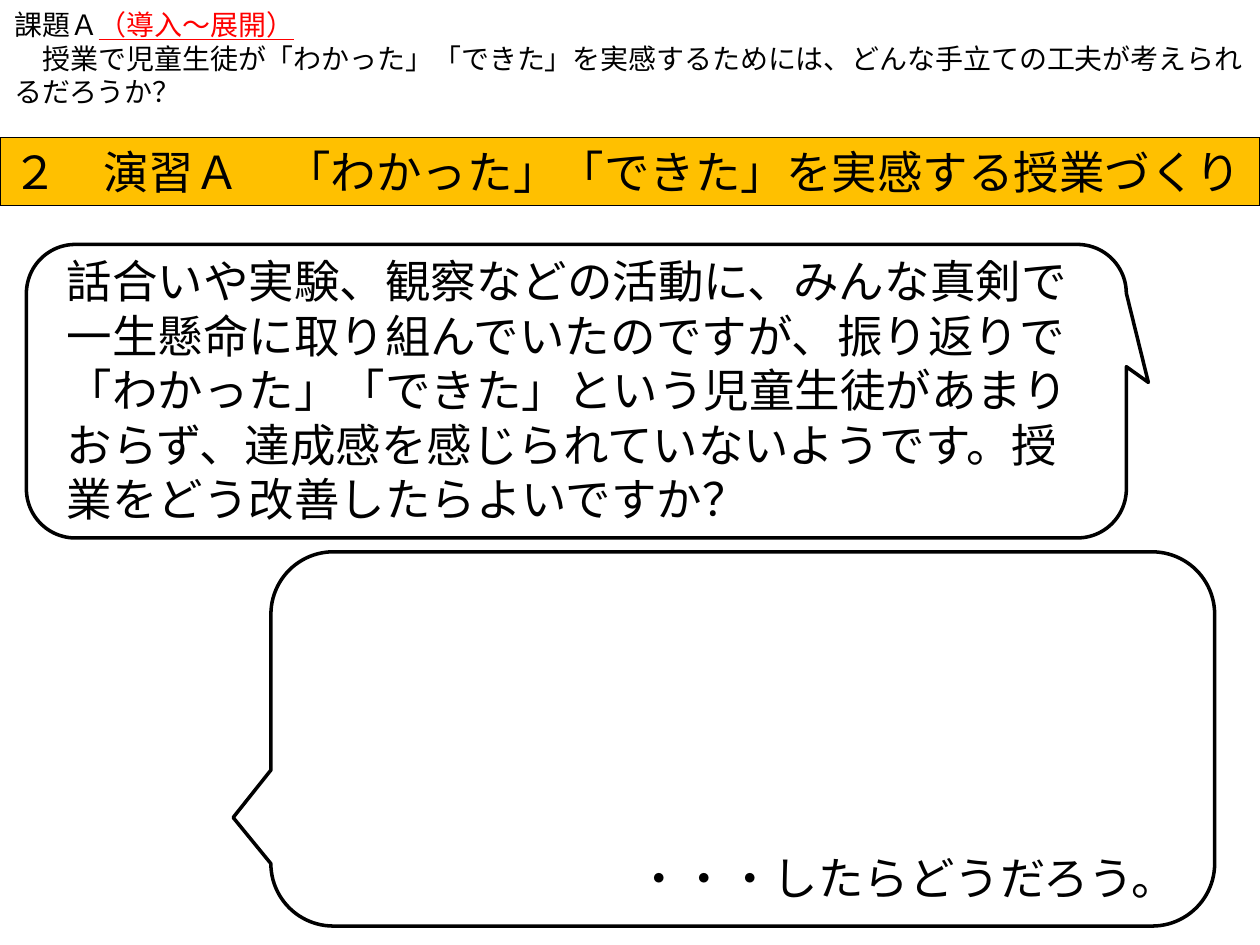
from dataclasses import dataclass

from pptx import Presentation
from pptx.dml.color import RGBColor
from pptx.enum.shapes import MSO_SHAPE
from pptx.enum.text import MSO_ANCHOR, MSO_AUTO_SIZE, PP_ALIGN
from pptx.util import Inches, Pt


@dataclass(frozen=True)
class Theme:
    ink: RGBColor = RGBColor(0x00, 0x00, 0x00)
    accent: RGBColor = RGBColor(0xFF, 0x00, 0x00)
    banner: RGBColor = RGBColor(0xFF, 0xC0, 0x00)
    body_font: str = "Arial"
    task_font: str = "Calibri"
    body_size: Pt = Pt(26)
    task_size: Pt = Pt(16)


THEME = Theme()


def style_paragraph(paragraph, font_name, size):
    paragraph.alignment = PP_ALIGN.LEFT
    paragraph.font.name = font_name
    paragraph.font.size = size
    paragraph.font.color.rgb = THEME.ink


def fill_text(shape, text, left_margin=0.1):
    frame = shape.text_frame
    frame.word_wrap = True
    frame.auto_size = MSO_AUTO_SIZE.SHAPE_TO_FIT_TEXT
    frame.vertical_anchor = MSO_ANCHOR.TOP
    frame.margin_left = Inches(left_margin)
    frame.text = text
    style_paragraph(frame.paragraphs[0], THEME.body_font, THEME.body_size)


def add_outlined_shape(slide, kind, box, line_width):
    shape = slide.shapes.add_shape(kind, *map(Inches, box))
    shape.shadow.inherit = False
    shape.fill.background()
    shape.line.color.rgb = THEME.ink
    shape.line.width = Pt(line_width)
    return shape


def add_speech_bubble(slide, box, tail_x, tail_y):
    bubble = add_outlined_shape(
        slide, MSO_SHAPE.ROUNDED_RECTANGULAR_CALLOUT, box, 2)
    for index, value in enumerate((tail_x, tail_y, 0.167)):
        bubble.adjustments[index] = value


def add_banner(slide, box, text):
    banner = add_outlined_shape(slide, MSO_SHAPE.RECTANGLE, box, 0.75)
    banner.fill.solid()
    banner.fill.fore_color.rgb = THEME.banner
    fill_text(banner, text)


def add_text(slide, box, text, left_margin=0.1):
    fill_text(slide.shapes.add_textbox(*map(Inches, box)), text, left_margin)


def add_task(slide, box, label, stage, question):
    frame = slide.shapes.add_textbox(*map(Inches, box)).text_frame
    frame.word_wrap = True
    frame.auto_size = MSO_AUTO_SIZE.SHAPE_TO_FIT_TEXT
    heading = frame.paragraphs[0]
    heading.add_run().text = label
    stage_run = heading.add_run()
    stage_run.text = stage
    stage_run.font.color.rgb = THEME.accent
    stage_run.font.underline = True
    frame.add_paragraph().text = question
    for paragraph in frame.paragraphs:
        style_paragraph(paragraph, THEME.task_font, THEME.task_size)


def main():
    presentation = Presentation()
    presentation.slide_width = Inches(10)
    presentation.slide_height = Inches(7.5)
    slide = presentation.slides.add_slide(presentation.slide_layouts[6])

    # Teacher's worry, with the section banner above it
    add_speech_bubble(slide, (0.21, 1.94, 8.73, 2.33), 0.52, -0.03)
    add_banner(slide, (0, 1.09, 10, 0.54),
               "２　演習Ａ　「わかった」「できた」を実感する授業づくり")
    add_text(slide, (0.43, 1.96, 8.3, 2.29),
             "話合いや実験、観察などの活動に、みんな真剣で一生懸命に取り組んで"
             "いたのですが、振り返りで「わかった」「できた」という児童生徒が"
             "あまりおらず、達成感を感じられていないようです。"
             "授業をどう改善したらよいですか？")

    # Reply with room to write in
    add_speech_bubble(slide, (2.15, 4.38, 7.49, 2.97), -0.54, 0.21)
    add_text(slide, (3.14, 6.7, 6.34, 0.54), "・・・したらどうだろう。",
             left_margin=1.91)

    # Task at the top
    add_task(slide, (0.02, 0.01, 9.98, 0.91), "課題Ａ", "（導入～展開）",
             "　授業で児童生徒が「わかった」「できた」を実感するためには、"
             "どんな手立ての工夫が考えられるだろうか？")

    presentation.save("out.pptx")


if __name__ == "__main__":
    main()
